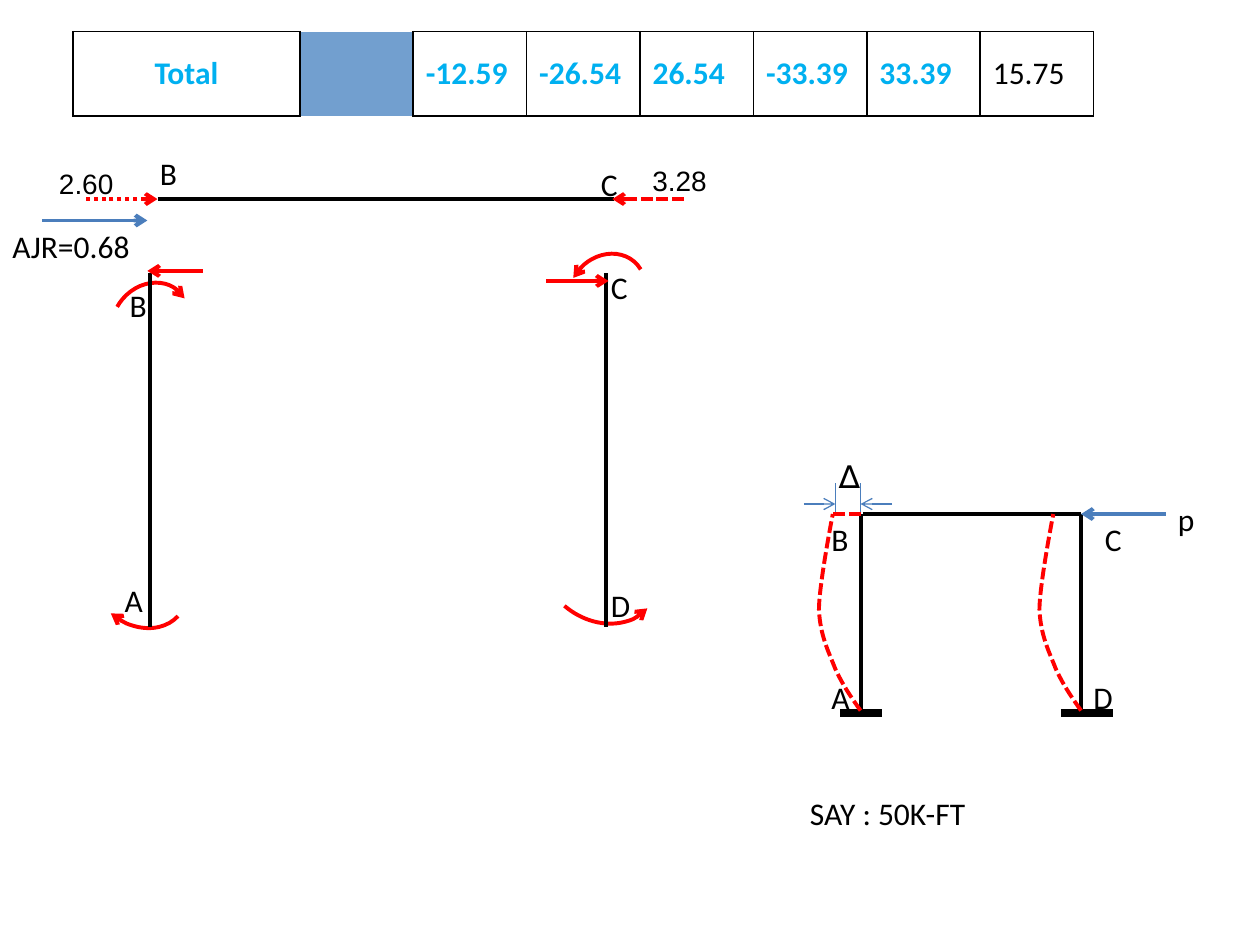
from dataclasses import dataclass

from lxml.etree import SubElement
from pptx import Presentation
from pptx.dml.color import RGBColor
from pptx.enum.dml import MSO_LINE
from pptx.enum.shapes import MSO_CONNECTOR, MSO_SHAPE
from pptx.enum.text import MSO_ANCHOR, MSO_AUTO_SIZE, PP_ALIGN
from pptx.oxml.ns import qn
from pptx.util import Inches, Pt


@dataclass(frozen=True)
class Theme:
    ink: RGBColor = RGBColor(0, 0, 0)
    force: RGBColor = RGBColor(0xFF, 0, 0)
    load: RGBColor = RGBColor(0x4B, 0x7E, 0xBC)
    total: RGBColor = RGBColor(0, 0xB0, 0xF0)
    body_font: str = "Calibri"
    value_font: str = "Arial"
    symbol_font: str = "Lato"
    body_size: Pt = Pt(18)
    value_size: Pt = Pt(16)
    thin: Pt = Pt(0.75)
    border: Pt = Pt(1)
    regular: Pt = Pt(2.25)
    thick: Pt = Pt(4.5)


def set_values(target, values):
    for name, value in values.items():
        setattr(target, name, value)


class FrameSlide:
    def __init__(self, presentation, theme):
        self.theme = theme
        self.slide = presentation.slides.add_slide(presentation.slide_layouts[6])
        self.shapes = self.slide.shapes

    def style_run(self, run, **changes):
        theme = self.theme
        color = changes.pop("color", theme.ink)
        set_values(run.font, {"name": theme.body_font, "size": theme.body_size, **changes})
        run.font.color.rgb = color

    def style_line(self, shape, color, width=None, dash=None, arrow=None):
        shape.line.color.rgb = color
        set_values(shape.line, {"width": width or self.theme.regular, "dash_style": dash})
        if arrow:
            outline = shape.element.spPr.find(qn("a:ln"))
            SubElement(outline, qn(f"a:{arrow}End"), type="arrow")

    def label(self, text, left, top, width=0.5, height=0.4, **font):
        box = self.shapes.add_textbox(*map(Inches, (left, top, width, height)))
        set_values(box.text_frame, {"word_wrap": True,
                                    "auto_size": MSO_AUTO_SIZE.SHAPE_TO_FIT_TEXT})
        run = box.text_frame.paragraphs[0].add_run()
        run.text = text
        self.style_run(run, **font)

    def line(self, start, end, color=None, **style):
        connector = self.shapes.add_connector(
            MSO_CONNECTOR.STRAIGHT, *map(Inches, (*start, *end)))
        self.style_line(connector, color or self.theme.ink, **style)
        SubElement(connector.element.spPr, qn("a:effectLst"))

    def moment(self, left, top, width, height, sweep, arrow, flipped=False):
        arc = self.shapes.add_shape(
            MSO_SHAPE.ARC, *map(Inches, (left, top, width, height)))
        for index, value in enumerate(sweep):
            arc.adjustments[index] = value
        arc.rotation = 310.6
        if flipped:
            arc.element.spPr.find(qn("a:xfrm")).set("flipV", "1")
        arc.shadow.inherit = False
        arc.fill.background()
        self.style_line(arc, self.theme.force, arrow=arrow)

    def curve(self, start, controls, color, **style):
        builder = self.shapes.build_freeform(*map(Inches, start))
        builder.add_line_segments(
            [tuple(map(Inches, point)) for point in controls], close=False)
        shape = builder.convert_to_shape()
        path = next(shape.element.iter(qn("a:path")))
        segments = path.findall(qn("a:lnTo"))
        for first in range(0, len(segments), 3):
            bezier = SubElement(path, qn("a:cubicBezTo"))
            for segment in segments[first:first + 3]:
                bezier.append(segment[0])
                path.remove(segment)
        shape.shadow.inherit = False
        shape.fill.background()
        self.style_line(shape, color, **style)

    def cell_borders(self, cell):
        properties = cell._tc.get_or_add_tcPr()
        for side in "LRTB":
            border = SubElement(properties, qn(f"a:ln{side}"), w=str(self.theme.border))
            fill = SubElement(border, qn("a:solidFill"))
            SubElement(fill, qn("a:srgbClr"), val=str(self.theme.ink))

    def totals(self, left, top, widths, height, texts):
        table = self.shapes.add_table(
            1, len(widths), *map(Inches, (left, top, sum(widths), height))).table
        set_values(table, {"first_row": False, "horz_banding": False})
        table.rows[0].height = Inches(height)
        for column, width in zip(table.columns, widths):
            column.width = Inches(width)
        table.cell(0, 0).merge(table.cell(0, 1))
        for index, text in enumerate(texts):
            cell = table.cell(0, index)
            cell.vertical_anchor = MSO_ANCHOR.MIDDLE
            self.cell_borders(cell)
            cell.fill.background()
            if text:
                paragraph = cell.text_frame.paragraphs[0]
                paragraph.alignment = PP_ALIGN.CENTER if index == 0 else PP_ALIGN.LEFT
                run = paragraph.add_run()
                run.text = text
                self.style_run(run, bold=True, color=self.theme.total)


def draw_columns(page, theme):
    lower, upper = (108.12, 161.21), (152.75, 8.43)
    page.moment(0.76, 4.19, 0.68, 0.84, lower, "head", flipped=True)
    page.moment(4.33, 3.97, 0.85, 1.03, lower, "tail", flipped=True)
    page.moment(4.48, 2.04, 0.67, 0.58, upper, "head")
    page.moment(0.86, 2.27, 0.67, 0.58, upper, "tail")
    for x in (1.19, 4.81):
        page.line((x, 2.17), (x, 4.98))
    for text, left, top in (("C", 4.75, 2.08), ("A", 0.89, 4.56),
                            ("B", 0.93, 2.22), ("D", 4.75, 4.6)):
        page.label(text, left, top)
    page.line((1.17, 2.15), (1.61, 2.15), theme.force, arrow="head")
    page.line((4.83, 2.23), (4.33, 2.23), theme.force, arrow="head")
    page.line((1.17, 1.75), (0.33, 1.75), theme.load, arrow="head")
    page.label("AJR=0.68", 0, 1.75, 1.17)


def draw_beam(page, theme):
    value_font = {"name": theme.value_font, "size": theme.value_size}
    level = 1.58
    page.line((1.25, level), (4.87, level))
    page.line((1.25, level), (0.67, level), theme.force,
              dash=MSO_LINE.ROUND_DOT, arrow="head")
    page.line((4.86, level), (5.45, level), theme.force,
              dash=MSO_LINE.SQUARE_DOT, arrow="head")
    page.label("3.28", 5.08, 1.25, 0.75, 0.37, **value_font)
    page.label("2.60", 0.37, 1.27, 0.67, 0.37, **value_font)
    page.label("C", 4.67, 1.26)
    page.label("B", 1.17, 1.17)


def draw_sway_frame(page, theme):
    left, right, top, base, sway = 6.83, 8.58, 4.08, 5.66, 6.63
    for x in (left, right):
        page.line((x, top), (x, base))
    page.line((6.85, top), (right, top))
    for start, end in ((6.67, 7), (8.42, 8.83)):
        page.line((start, base), (end, base), width=theme.thick)
    for text, x, y in (("A", 6.5, 5.33), ("B", 6.5, top), ("C", 8.67, top),
                       ("D", right, 5.33), ("p", 9.25, 3.92)):
        page.label(text, x, y, 0.33)
    page.line((right, top), (9.25, top), theme.load, arrow="head")
    bend = ((-0.07, 5.54), (-0.14, 5.44), (-0.2, 5.31),
            (-0.25, 5.18), (-0.32, 5.05), (-0.33, 4.84),
            (-0.33, 4.64), (-0.22, top), (-0.22, top))
    for x in (left, right):
        page.curve((x, 5.64), [(x + offset, y) for offset, y in bend],
                   theme.force, dash=MSO_LINE.SQUARE_DOT)
    for x, tip in ((sway, 6.38), (left, 7.08)):
        page.line((x, top), (x, 3.83), theme.load, width=theme.thin)
        page.line((tip, 4), (x, 4), theme.load, width=theme.thin, arrow="tail")
    page.label("∆", 6.56, 3.58, 0.42, name=theme.symbol_font)
    page.line((left, top), (6.61, top), theme.force, dash=MSO_LINE.SQUARE_DOT)
    page.label("SAY : 50K-FT", 6.33, 6.25, 1.83)


def main():
    presentation = Presentation()
    set_values(presentation, {"slide_width": Inches(10), "slide_height": Inches(7.5)})
    theme = Theme()
    page = FrameSlide(presentation, theme)
    draw_columns(page, theme)
    page.totals(0.58, 0.25, [0.69, 1.11] + [0.9] * 7, 0.67,
                ["Total", "", "-12.59", "-26.54", "26.54", "-33.39", "33.39", "15.75", ""])
    draw_sway_frame(page, theme)
    draw_beam(page, theme)
    presentation.save("out.pptx")


if __name__ == "__main__":
    main()
